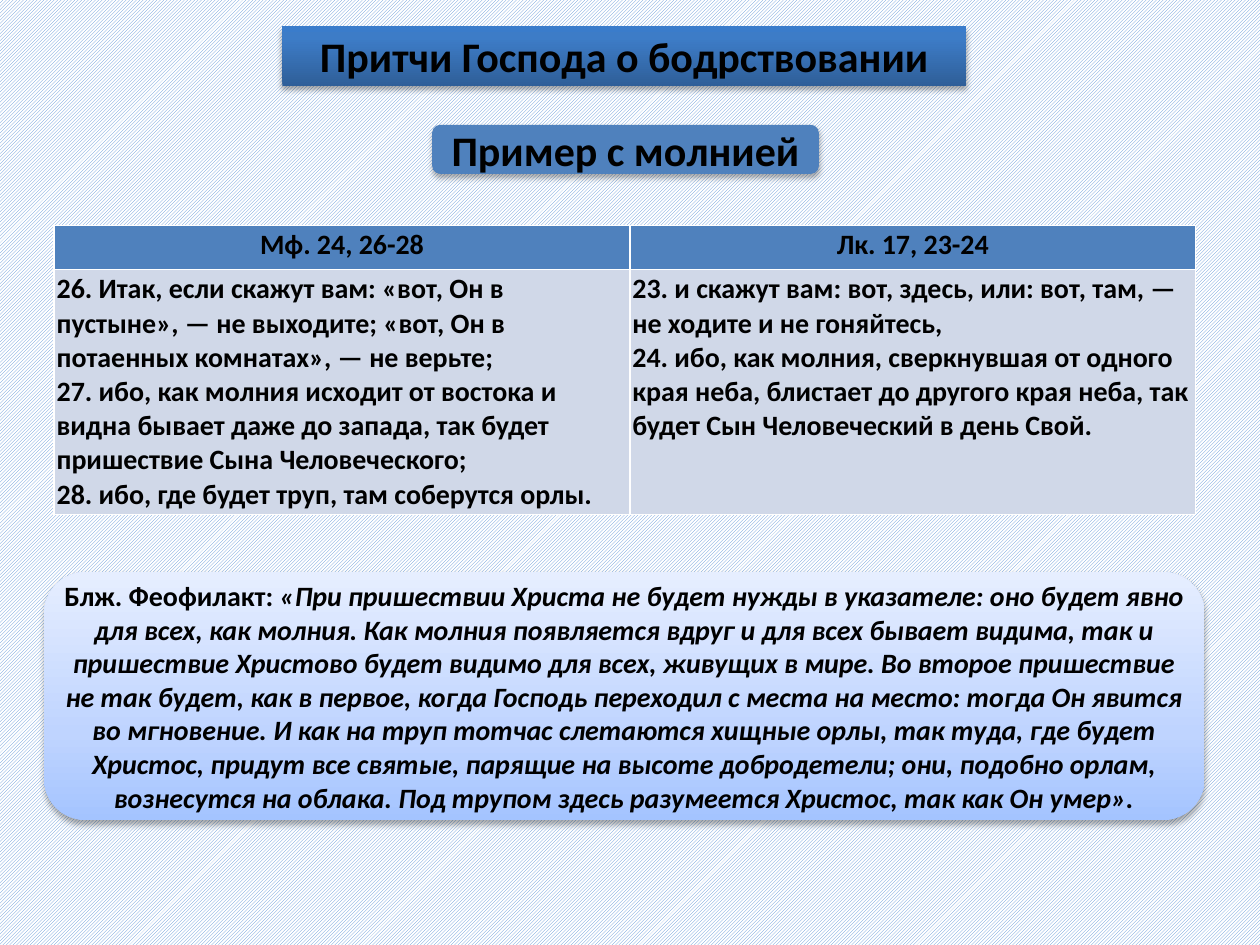
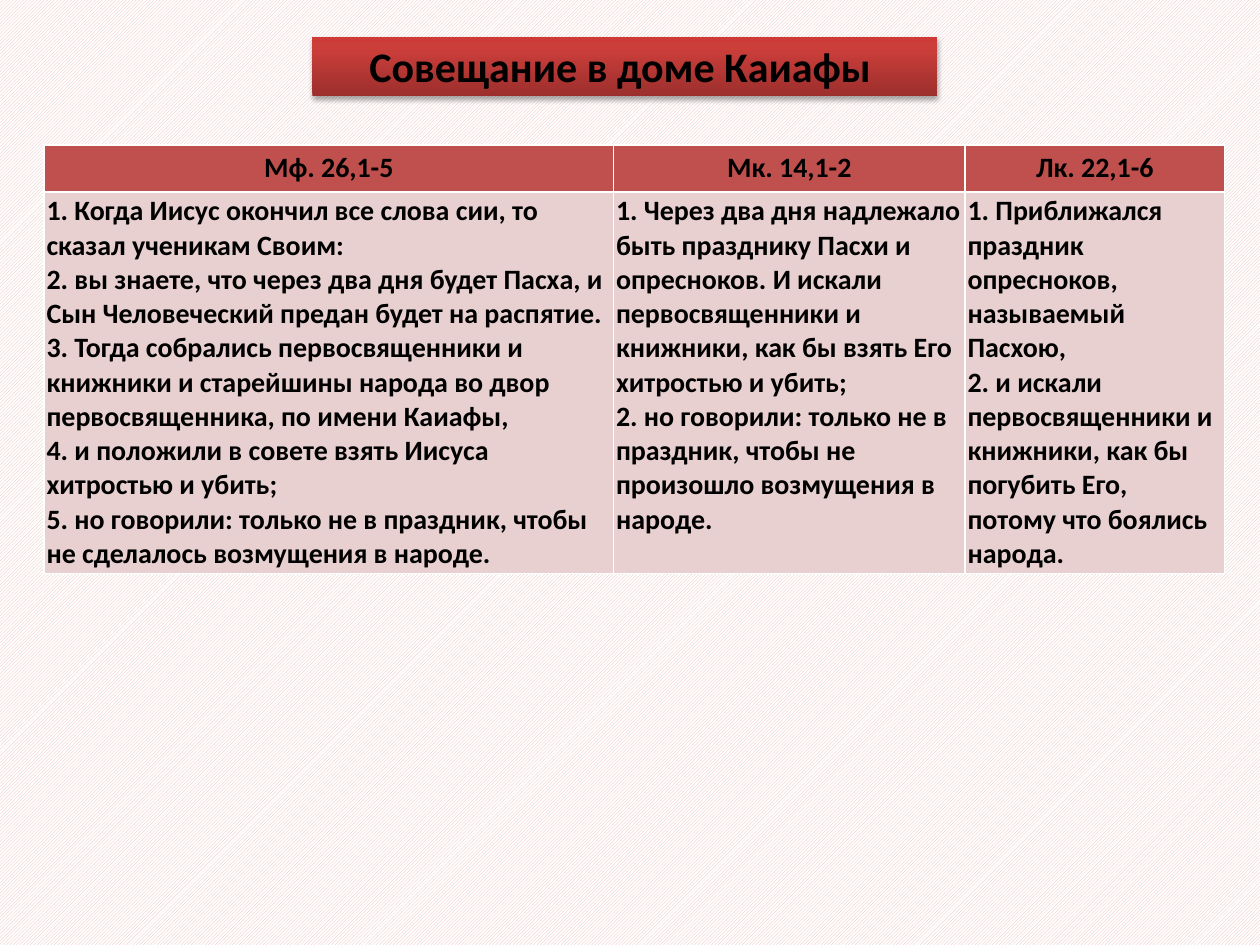
"""Builds two slides of Gospel passages compared side by side."""
from lxml.etree import SubElement
from pptx import Presentation
from pptx.dml.color import RGBColor
from pptx.enum.dml import MSO_PATTERN
from pptx.enum.shapes import MSO_SHAPE
from pptx.enum.text import MSO_ANCHOR, MSO_AUTO_SIZE, PP_ALIGN
from pptx.oxml.ns import qn
from pptx.util import Inches, Pt

BLACK = RGBColor(0x00, 0x00, 0x00)
WHITE = RGBColor(0xFF, 0xFF, 0xFF)
BLUE = RGBColor(0x4F, 0x81, 0xBD)
PALE_BLUE = RGBColor(0xD0, 0xD8, 0xE8)
BLUE_HATCH = RGBColor(0x55, 0x8E, 0xD5)
RED = RGBColor(0xC0, 0x50, 0x4D)
PALE_RED = RGBColor(0xE8, 0xD0, 0xD0)
RED_HATCH = RGBColor(0xE6, 0xB9, 0xB8)

BLUE_GRADIENT = [
    (0, RGBColor(0x2F, 0x5F, 0x99)),
    (80, RGBColor(0x3D, 0x7C, 0xC7)),
    (100, RGBColor(0x3A, 0x7C, 0xCB)),
]
RED_GRADIENT = [
    (0, RGBColor(0x9C, 0x2F, 0x2D)),
    (80, RGBColor(0xCB, 0x3E, 0x3A)),
    (100, RGBColor(0xCE, 0x3B, 0x37)),
]
QUOTE_GRADIENT = [
    (0, RGBColor(0xA4, 0xC4, 0xFF)),
    (35, RGBColor(0xBF, 0xD4, 0xFF)),
    (100, RGBColor(0xE6, 0xEE, 0xFF)),
]

HEADING_FONT = {"name": "Calibri", "size": Pt(24), "bold": True}
TEXT_FONT = {"name": "Calibri", "size": Pt(16), "bold": True}
ITALIC_FONT = {**TEXT_FONT, "italic": True}
BOX_FRAME = {
    "word_wrap": True,
    "auto_size": MSO_AUTO_SIZE.NONE,
    "vertical_anchor": MSO_ANCHOR.MIDDLE,
}
QUOTE_FRAME = {**BOX_FRAME, "margin_left": 0, "margin_right": 0}
SIDES = ("left", "right", "top", "bottom")
TIGHT_CELL = {f"margin_{side}": Inches(0.02) for side in SIDES}
TITLE_SHADOW = {"alpha": 35, "blur": 3.1, "distance": 1.8}
BOX_SHADOW = {"alpha": 32, "blur": 3.5, "distance": 2.2}
HEADER_HEIGHT = 0.35

SLIDES = [
    {
        "hatch": BLUE_HATCH,
        "title": "Притчи Господа о бодрствовании",
        "title_place": (2.24, 0.21, 5.43, 0.47),
        "title_fill": BLUE_GRADIENT,
        "table_place": (0.43, 1.79, 9.06, 2.26),
        "header_fill": BLUE,
        "header_format": TIGHT_CELL,
        "verse_fill": PALE_BLUE,
        "passages": [
            ("Мф. 24, 26-28", 4.57, [
                "26. Итак, если скажут вам: «вот, Он в пустыне», — не выходите; "
                "«вот, Он в потаенных комнатах», — не верьте;",
                "27. ибо, как молния исходит от востока и видна бывает даже до "
                "запада, так будет пришествие Сына Человеческого;",
                "28. ибо, где будет труп, там соберутся орлы.",
            ]),
            ("Лк. 17, 23-24", 4.49, [
                "23. и скажут вам: вот, здесь, или: вот, там, — не ходите и не "
                "гоняйтесь,",
                "24. ибо, как молния, сверкнувшая от одного края неба, блистает "
                "до другого края неба, так будет Сын Человеческий в день Свой.",
            ]),
        ],
        "boxes": [
            {
                "place": (3.43, 0.99, 3.07, 0.39),
                "fill": BLUE,
                "frame": BOX_FRAME,
                "runs": [("Пример с молнией", HEADING_FONT)],
            },
            {
                "place": (0.35, 4.54, 9.21, 1.97),
                "fill": QUOTE_GRADIENT,
                "frame": QUOTE_FRAME,
                "runs": [
                    ("Блж. Феофилакт: ", TEXT_FONT),
                    ("«При пришествии Христа не будет нужды в указателе: оно "
                     "будет явно для всех, как молния. Как молния появляется "
                     "вдруг и для всех бывает видима, так и пришествие Христово "
                     "будет видимо для всех, живущих в мире. Во второе "
                     "пришествие не так будет, как в первое, когда Господь "
                     "переходил с места на место: тогда Он явится во мгновение. "
                     "И как на труп тотчас слетаются хищные орлы, так туда, где "
                     "будет Христос, придут все святые, парящие на высоте "
                     "добродетели; они, подобно орлам, вознесутся на облака. "
                     "Под трупом здесь разумеется Христос, так как Он умер».",
                     ITALIC_FONT),
                ],
            },
        ],
    },
    {
        "hatch": RED_HATCH,
        "title": "Совещание в доме Каиафы ",
        "title_place": (2.48, 0.29, 4.96, 0.47),
        "title_fill": RED_GRADIENT,
        "table_place": (0.35, 1.15, 9.37, 3.34),
        "header_fill": RED,
        "header_format": {},
        "verse_fill": PALE_RED,
        "passages": [
            ("Мф. 26,1-5", 4.52, [
                "1. Когда Иисус окончил все слова сии, то сказал ученикам Своим:",
                "2. вы знаете, что через два дня будет Пасха, и Сын Человеческий "
                "предан будет на распятие.",
                "3. Тогда собрались первосвященники и книжники и старейшины "
                "народа во двор первосвященника, по имени Каиафы,",
                "4. и положили в совете взять Иисуса хитростью и убить;",
                "5. но говорили: только не в праздник, чтобы не сделалось "
                "возмущения в народе.",
            ]),
            ("Мк. 14,1-2", 2.79, [
                "1. Через два дня надлежало быть празднику Пасхи и опресноков. "
                "И искали первосвященники и книжники, как бы взять Его "
                "хитростью и убить;",
                "2. но говорили: только не в праздник, чтобы не произошло "
                "возмущения в народе.",
            ]),
            ("Лк. 22,1-6", 2.06, [
                "1. Приближался праздник опресноков, называемый Пасхою,",
                "2. и искали первосвященники и книжники, как бы погубить Его, "
                "потому что боялись народа.",
            ]),
        ],
        "boxes": [],
    },
]


def apply_format(target, values):
    for name, value in values.items():
        setattr(target, name, value)


def inches(place):
    return [Inches(length) for length in place]


def write_paragraphs(text_frame, paragraphs, alignment):
    for index, runs in enumerate(paragraphs):
        paragraph = text_frame.add_paragraph() if index else text_frame.paragraphs[0]
        paragraph.alignment = alignment
        for text, font in runs:
            run = paragraph.add_run()
            run.text = text
            apply_format(run.font, font)
            run.font.color.rgb = BLACK


def add_color(parent, color):
    return SubElement(parent, qn("a:srgbClr"), val=str(color))


def fill_shape(shape, fill):
    if isinstance(fill, RGBColor):
        shape.fill.solid()
        shape.fill.fore_color.rgb = fill
        return
    shape.fill.gradient()
    shape.fill.gradient_angle = 90
    stops = next(shape.element.iter(qn("a:gsLst")))
    for stop in list(stops):
        stops.remove(stop)
    for position, color in fill:
        add_color(SubElement(stops, qn("a:gs"), pos=str(position * 1000)), color)


def add_shadow(shape, shadow):
    shape.shadow.inherit = False
    effects = next(shape.element.iter(qn("a:effectLst")))
    outer = SubElement(
        effects, qn("a:outerShdw"), blurRad=str(Pt(shadow["blur"])),
        dist=str(Pt(shadow["distance"])), dir="5400000", rotWithShape="0",
    )
    SubElement(add_color(outer, BLACK), qn("a:alpha"), val=str(shadow["alpha"] * 1000))


def format_box(shape, fill, shadow, frame, runs):
    fill_shape(shape, fill)
    shape.line.fill.background()
    add_shadow(shape, shadow)
    apply_format(shape.text_frame, frame)
    write_paragraphs(shape.text_frame, [runs], PP_ALIGN.CENTER)


def add_title(slide, content):
    title = slide.shapes.title
    apply_format(title, dict(zip(("left", "top", "width", "height"),
                                 inches(content["title_place"]))))
    geometry = SubElement(title.element.spPr, qn("a:prstGeom"), prst="roundRect")
    SubElement(geometry, qn("a:avLst"))
    format_box(title, content["title_fill"], TITLE_SHADOW, BOX_FRAME,
               [(content["title"], HEADING_FONT)])


def fill_cell(cell, lines, color, margins, alignment):
    cell.fill.solid()
    cell.fill.fore_color.rgb = color
    apply_format(cell, margins)
    paragraphs = [[(line, TEXT_FONT)] for line in lines]
    write_paragraphs(cell.text_frame, paragraphs, alignment)


def add_passages(slide, content):
    passages = content["passages"]
    place = content["table_place"]
    table = slide.shapes.add_table(2, len(passages), *inches(place)).table
    for row, height in zip(table.rows, (HEADER_HEIGHT, place[3] - HEADER_HEIGHT)):
        row.height = Inches(height)
    for index, (reference, width, verses) in enumerate(passages):
        table.columns[index].width = Inches(width)
        fill_cell(table.cell(0, index), [reference], content["header_fill"],
                  content["header_format"], PP_ALIGN.CENTER)
        fill_cell(table.cell(1, index), verses, content["verse_fill"],
                  TIGHT_CELL, PP_ALIGN.LEFT)


def add_slide(presentation, content):
    slide = presentation.slides.add_slide(presentation.slide_layouts[5])
    background = slide.background.fill
    background.patterned()
    background.pattern = MSO_PATTERN.LIGHT_UPWARD_DIAGONAL
    background.fore_color.rgb = content["hatch"]
    background.back_color.rgb = WHITE
    add_title(slide, content)
    add_passages(slide, content)
    for box in content["boxes"]:
        shape = slide.shapes.add_shape(MSO_SHAPE.ROUNDED_RECTANGLE, *inches(box["place"]))
        format_box(shape, box["fill"], BOX_SHADOW, box["frame"], box["runs"])


def main():
    presentation = Presentation()
    presentation.slide_width = Inches(10)
    presentation.slide_height = Inches(7.5)
    for content in SLIDES:
        add_slide(presentation, content)
    presentation.save("out.pptx")


if __name__ == "__main__":
    main()
